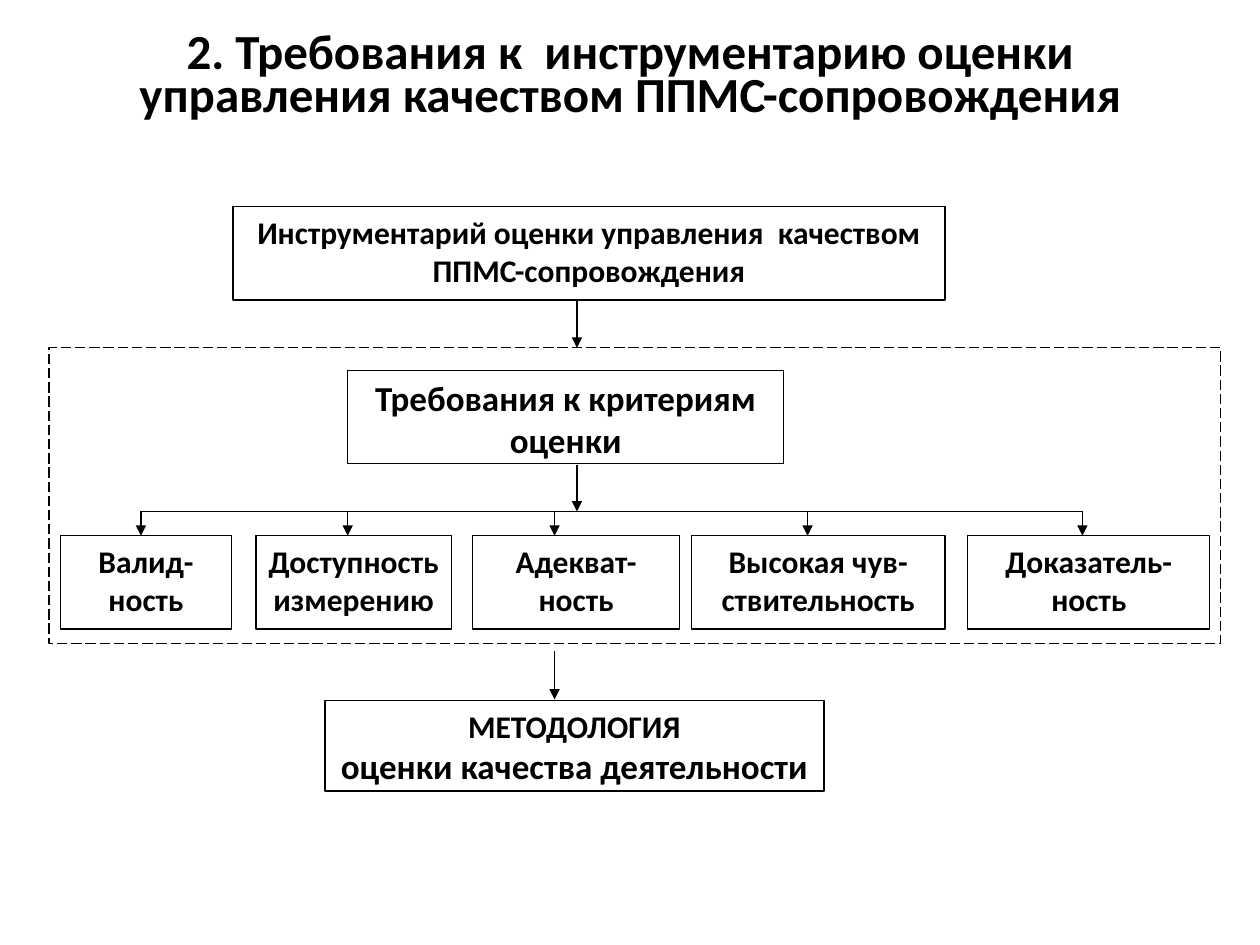
from lxml import etree
from pptx import Presentation, util as u
from pptx.dml.color import RGBColor
from pptx.enum import dml, shapes, text
from pptx.oxml import ns

COLORS = {"ink": "000000", "paper": "FFFFFF"}
ROW_TOP, BOX_HEIGHT, BRANCH_Y = 10.8, 1.88, 10.31
TRUNK_X, METHOD_X = 11.63, 11.18
CRITERIA = [
    (1.22, 3.45, 2.84, ["Валид-ность"]),
    (5.16, 3.94, 7.01, ["Доступность измерению"]),
    (9.53, 4.17, 11.18, ["Адекват-ность"]),
    (13.94, 5.11, 16.28, ["Высокая чув-", "ствительность"]),
    (19.51, 4.88, 21.82, ["Доказатель-ность"]),
]


class Diagram:
    font_name = "Calibri"
    line_width = u.Pt(0.75)

    def __init__(self, slide):
        self.slide = slide

    def color(self, name):
        return RGBColor.from_string(COLORS[name])

    def set_text(self, frame, lines, sizes, spacing=None):
        frame.word_wrap = True
        frame.auto_size = text.MSO_AUTO_SIZE.NONE
        frame.vertical_anchor = text.MSO_ANCHOR.TOP
        frame.margin_left = frame.margin_right = u.Cm(0.22)
        frame.margin_top = frame.margin_bottom = u.Cm(0.13)
        frame.text = "\n".join(lines)
        for paragraph, size in zip(frame.paragraphs, sizes):
            paragraph.alignment = text.PP_ALIGN.CENTER
            paragraph.space_before = u.Pt(0)
            paragraph.line_spacing = spacing
            paragraph.font.name = self.font_name
            paragraph.font.size = u.Pt(size)
            paragraph.font.bold = True
            paragraph.font.color.rgb = self.color("ink")

    def title(self, left, top, width, height, content):
        shape = self.slide.shapes.title
        shape.left, shape.top = u.Cm(left), u.Cm(top)
        shape.width, shape.height = u.Cm(width), u.Cm(height)
        self.set_text(shape.text_frame, [content], [28], u.Pt(25))

    def outline(self, left, top, width, height):
        shape = self.slide.shapes.add_shape(
            shapes.MSO_SHAPE.RECTANGLE, u.Cm(left), u.Cm(top), u.Cm(width), u.Cm(height))
        shape.shadow.inherit = False
        shape.fill.background()
        shape.line.color.rgb = self.color("ink")
        shape.line.width = self.line_width
        return shape

    def dashed_frame(self, left, top, width, height):
        self.outline(left, top, width, height).line.dash_style = dml.MSO_LINE.LONG_DASH

    def box(self, left, top, width, height, lines, sizes):
        shape = self.outline(left, top, width, height)
        shape.fill.solid()
        shape.fill.fore_color.rgb = self.color("paper")
        self.set_text(shape.text_frame, lines, sizes)

    def line(self, x1, y1, x2, y2):
        connector = self.slide.shapes.add_connector(
            shapes.MSO_CONNECTOR.STRAIGHT, u.Cm(x1), u.Cm(y1), u.Cm(x2), u.Cm(y2))
        connector.line.color.rgb = self.color("ink")
        connector.line.width = self.line_width
        etree.SubElement(connector._element.spPr, ns.qn("a:effectLst"))
        return connector

    def down_arrow(self, x, top, bottom):
        connector = self.line(x, top, x, bottom)
        etree.SubElement(connector.line._get_or_add_ln(), ns.qn("a:tailEnd"), type="triangle")


def main():
    presentation = Presentation()
    presentation.slide_width, presentation.slide_height = u.Cm(25.4), u.Cm(19.05)
    diagram = Diagram(presentation.slides.add_slide(presentation.slide_layouts[5]))

    diagram.title(0.99, 0.58, 23.42, 2.08,
                  "2. Требования к  инструментарию оценки управления качеством ППМС-сопровождения")
    diagram.dashed_frame(0.99, 7.01, 23.62, 5.97)
    diagram.box(4.7, 4.17, 14.35, BOX_HEIGHT,
                ["Инструментарий оценки управления  качеством ППМС-сопровождения"], [18])
    diagram.box(7.01, 7.47, 8.79, BOX_HEIGHT, ["Требования к критериям", "оценки"], [20, 20])
    diagram.box(6.55, 14.12, 10.06, 1.83,
                ["МЕТОДОЛОГИЯ", "оценки качества деятельности"], [18, 20])

    diagram.line(CRITERIA[0][2], BRANCH_Y, CRITERIA[-1][2], BRANCH_Y)
    for left, width, arrow_x, lines in CRITERIA:
        diagram.box(left, ROW_TOP, width, BOX_HEIGHT, lines, [18] * len(lines))
        diagram.down_arrow(arrow_x, BRANCH_Y, ROW_TOP)

    diagram.down_arrow(TRUNK_X, 6.05, 7.01)
    diagram.down_arrow(TRUNK_X, 9.37, BRANCH_Y)
    diagram.down_arrow(METHOD_X, 13.13, 14.1)

    presentation.save("out.pptx")


if __name__ == "__main__":
    main()
